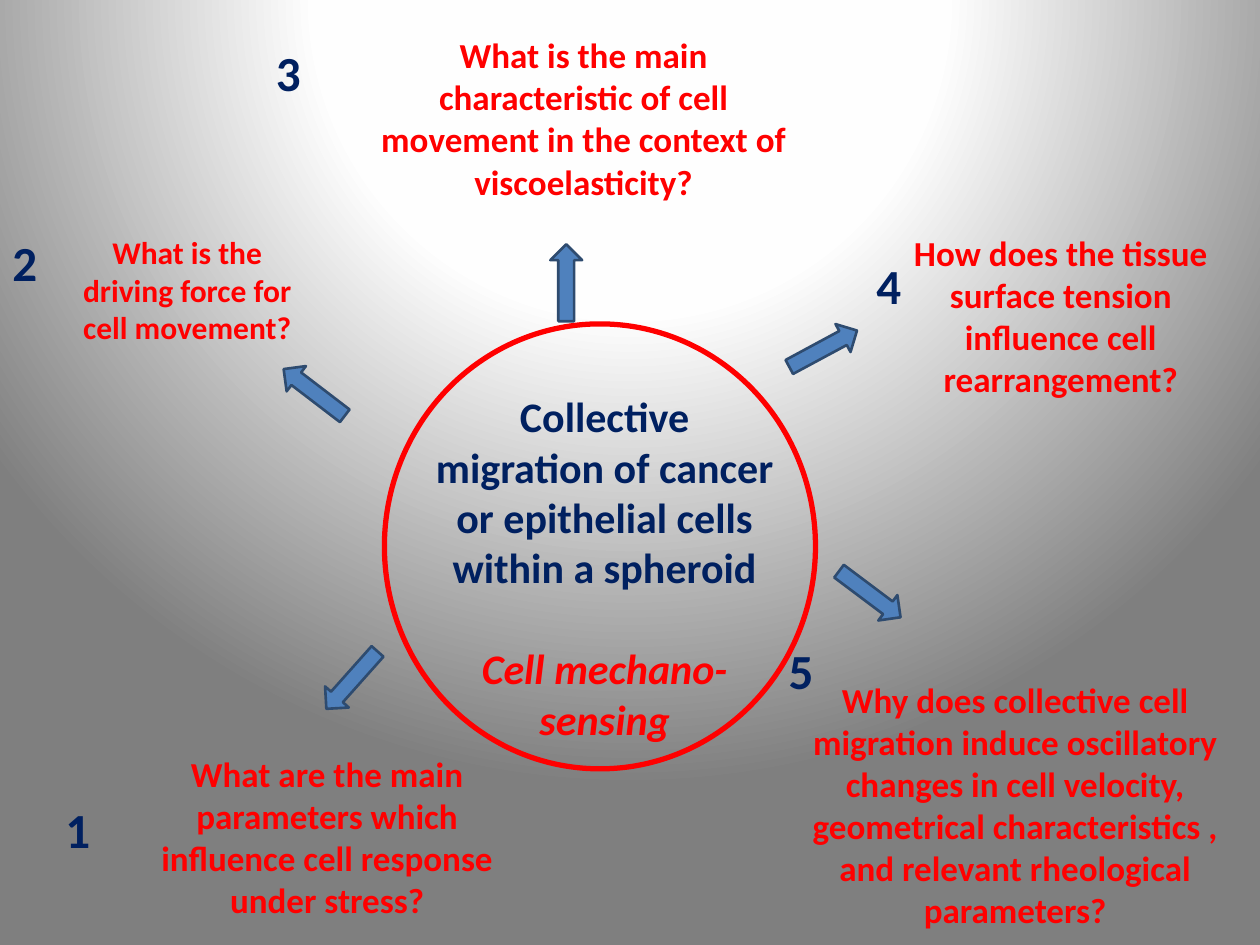
from pptx import Presentation
from pptx.dml.color import RGBColor
from pptx.enum.shapes import MSO_SHAPE
from pptx.enum.text import MSO_AUTO_SIZE, PP_ALIGN
from pptx.oxml import parse_xml
from pptx.util import Cm, Pt

RIGHT_ARROW, OVAL = MSO_SHAPE.RIGHT_ARROW, MSO_SHAPE.OVAL
CENTER, LEFT = PP_ALIGN.CENTER, PP_ALIGN.LEFT
GROW = MSO_AUTO_SIZE.SHAPE_TO_FIT_TEXT
FONT = "Calibri"
COLORS = {
    "navy": "002060",
    "red": "FF0000",
    "arrow": "4F81BD",
    "arrow_edge": "2E4B6F",
}
# position in percent, colour
BACKGROUND_STOPS = [(0, "FFFFFF"), (40, "FEFEFE"), (100, "7F7F7F")]

ARROW_SIZE = (1.55, 0.64)
# left, top (cm), rotation (degrees)
ARROWS = [
    (15.82, 6.71, 331.7),
    (10.64, 5.38, 270),
    (5.56, 7.59, 217.4),
    (16.76, 11.66, 36.9),
    (6.32, 13.39, 131.7),
]

NUMBER_HEIGHT = 1.44
# number, its (left, top, width), question, its (left, top, width, height), size
QUESTIONS = [
    ("2", (0, 4.57, 1.27),
     "What is the driving force for cell movement?",
     (1.07, 4.57, 5.41, 2.57), 18),
    ("3", (5.31, 0.74, 2.08),
     "What is the main characteristic of cell movement in the context of "
     "viscoelasticity?",
     (7.09, 0.56, 9.35, 3.68), 20),
    ("4", (17.42, 5.03, 1.22),
     "How does the tissue surface tension influence cell rearrangement?",
     (18.03, 4.55, 6.71, 3.68), 20),
    ("1", (1.07, 16, 1.57),
     "What are the main parameters which influence cell response under stress?",
     (2.62, 15.04, 7.95, 4.52), 20),
    ("5", (15.65, 12.78, 2.08),
     "Why does collective cell migration induce oscillatory changes in cell "
     "velocity, geometrical characteristics , and relevant rheological "
     "parameters?",
     (15.65, 13.56, 9.63, 5.38), 20),
]


def rgb(name):
    return RGBColor.from_string(COLORS[name])


def set_background(slide):
    """Fill the slide with a circular gradient centred above its top edge."""
    stops = "".join(
        f'<a:gs pos="{percent * 1000}"><a:srgbClr val="{color}"/></a:gs>'
        for percent, color in BACKGROUND_STOPS
    )
    gradient = parse_xml(
        '<a:gradFill xmlns:a="http://schemas.openxmlformats.org/drawingml/2006/main"'
        f' rotWithShape="1"><a:gsLst>{stops}</a:gsLst><a:path path="circle">'
        '<a:fillToRect l="50000" t="-80000" r="50000" b="180000"/>'
        "</a:path></a:gradFill>"
    )
    fill = slide.background.fill
    fill.gradient()
    placeholder = slide.element.xpath("./p:cSld/p:bg/p:bgPr/a:gradFill")[0]
    placeholder.getparent().replace(placeholder, gradient)


def add_shape(shapes, kind, box, line, width, fill=None, rotation=0):
    shape = shapes.add_shape(kind, *map(Cm, box))
    shape.shadow.inherit = False
    shape.rotation = rotation
    shape.line.color.rgb = rgb(line)
    shape.line.width = Pt(width)
    if fill:
        shape.fill.solid()
        shape.fill.fore_color.rgb = rgb(fill)
    else:
        shape.fill.background()


def add_text_frame(shapes, box):
    frame = shapes.add_textbox(*map(Cm, box)).text_frame
    frame.word_wrap = True
    frame.auto_size = GROW
    return frame


def write(paragraph, text, size, color, align=CENTER, italic=None, before=0):
    paragraph.alignment = align
    paragraph.space_before = Pt(before)
    run = paragraph.add_run()
    run.text = text
    font = run.font
    font.name, font.size, font.bold, font.italic = FONT, Pt(size), True, italic
    font.color.rgb = rgb(color)


def add_topic(slide):
    """Add the central circle with the theme of all the questions."""
    shapes = slide.shapes.add_group_shape().shapes
    topic = add_text_frame(shapes, (8.48, 7.75, 7.42, 7.44))
    write(topic.paragraphs[0],
          "Collective migration of cancer or epithelial cells within a spheroid",
          size=24, color="navy")
    write(topic.add_paragraph(), "Cell mechano-sensing",
          size=24, color="red", italic=True, before=28.8)
    add_shape(shapes, OVAL, (7.75, 6.53, 8.69, 8.97), line="red", width=3)


def add_question(slide, number, number_box, question, question_box, size):
    shapes = slide.shapes.add_group_shape().shapes
    write(add_text_frame(shapes, question_box).paragraphs[0], question,
          size=size, color="red")
    write(add_text_frame(shapes, (*number_box, NUMBER_HEIGHT)).paragraphs[0],
          number, size=28, color="navy", align=LEFT)


def main():
    deck = Presentation()
    deck.slide_width, deck.slide_height = Cm(25.4), Cm(19.05)
    slide = deck.slides.add_slide(deck.slide_layouts[6])
    set_background(slide)
    for left, top, rotation in ARROWS:
        add_shape(slide.shapes, RIGHT_ARROW, (left, top, *ARROW_SIZE),
                  line="arrow_edge", width=1.5, fill="arrow", rotation=rotation)
    add_topic(slide)
    for entry in QUESTIONS:
        add_question(slide, *entry)
    deck.save("out.pptx")


if __name__ == "__main__":
    main()
